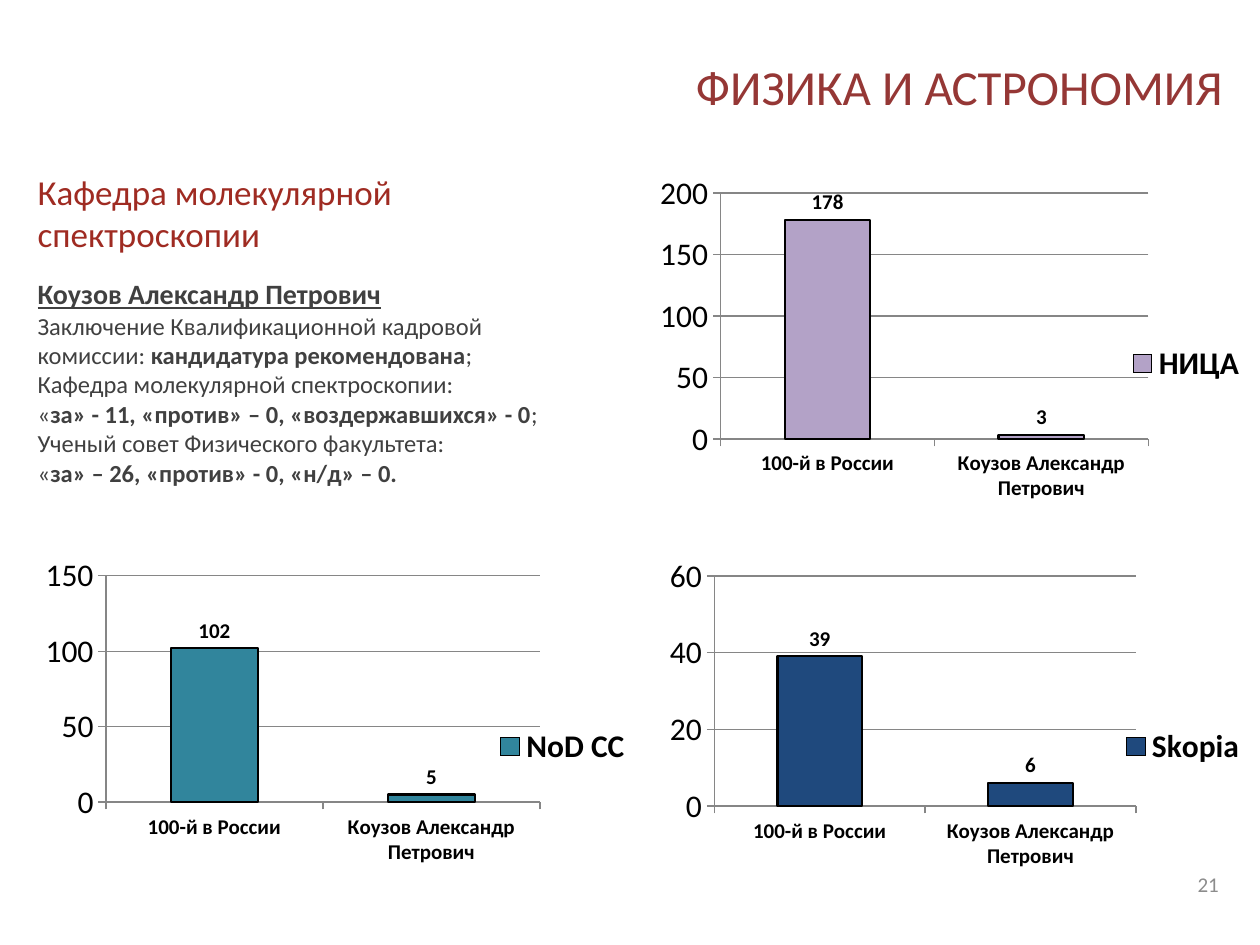
from dataclasses import dataclass

from pptx import Presentation
from pptx.chart.data import CategoryChartData
from pptx.dml.color import RGBColor
from pptx.enum.chart import XL_CHART_TYPE, XL_LABEL_POSITION, XL_LEGEND_POSITION, XL_TICK_MARK
from pptx.enum.text import MSO_ANCHOR, PP_ALIGN
from pptx.oxml import parse_xml
from pptx.oxml.ns import nsdecls
from pptx.util import Cm, Pt

FONT = "Calibri"
BLACK = RGBColor(0x00, 0x00, 0x00)
AXIS_GREY = RGBColor(0x86, 0x86, 0x86)
NUMBER_GREY = RGBColor(0x8C, 0x8C, 0x8C)
TEXT_GREY = RGBColor(0x40, 0x40, 0x40)
TITLE_RED = RGBColor(0x95, 0x37, 0x35)
DEPARTMENT_RED = RGBColor(0x9F, 0x2B, 0x22)
LILAC = RGBColor(0xB3, 0xA2, 0xC7)
TEAL = RGBColor(0x31, 0x85, 0x9C)
NAVY = RGBColor(0x1F, 0x49, 0x7D)

CANDIDATE = "Коузов Александр Петрович"
CATEGORIES = ("100-й в России", CANDIDATE)
LEFT_COLUMN, RIGHT_COLUMN = 0.51, 12.9
UPPER_ROW, LOWER_ROW = 3.33, 11.05
CHART_WIDTH, CHART_HEIGHT = 12.5, 8.0


@dataclass(frozen=True)
class CitationIndex:
    name: str
    values: tuple[int, int]
    color: RGBColor
    left: float
    top: float
    axis_max: int
    axis_step: int
    plot_area: tuple[float, float, float, float]


@dataclass(frozen=True)
class Label:
    text: str
    box: tuple[float, float, float, float]
    size: int
    color: RGBColor
    align: PP_ALIGN


INDEXES = (
    CitationIndex("НИЦА", (178, 3), LILAC, RIGHT_COLUMN, UPPER_ROW, 200, 50,
                  (0.13, 0.07, 0.69, 0.62)),
    CitationIndex("NoD CC", (102, 5), TEAL, LEFT_COLUMN, LOWER_ROW, 150, 50,
                  (0.13, 0.07, 0.7, 0.57)),
    CitationIndex("Skopia", (39, 6), NAVY, RIGHT_COLUMN, LOWER_ROW, 60, 20,
                  (0.12, 0.07, 0.68, 0.58)),
)

LABELS = (
    Label("ФИЗИКА И АСТРОНОМИЯ", (6.5, 0.76, 18.39, 1.96), 28, TITLE_RED, PP_ALIGN.RIGHT),
    Label("Кафедра молекулярной спектроскопии", (LEFT_COLUMN, 3.3, 10.8, 1.96), 20,
          DEPARTMENT_RED, PP_ALIGN.LEFT),
    Label("21", (18.9, 17.32, 5.92, 1.02), 12, NUMBER_GREY, PP_ALIGN.RIGHT),
)

# Each line is a sequence of (text, bold) pieces.
DECISIONS = (
    (("Заключение Квалификационной кадровой комиссии: ", False),
     ("кандидатура рекомендована", True), (";", False)),
    (("Кафедра молекулярной спектроскопии:", False),),
    (("«", False), ("за» - 11, «против» – 0, «воздержавшихся» - 0", True), (";", False)),
    (("Ученый совет Физического факультета:", False),),
    (("«", False), ("за» – 26, «против» - 0, «н/д» – 0.", True)),
)


def style_font(font, size: int, color: RGBColor) -> None:
    font.name = FONT
    font.size = Pt(size)
    font.color.rgb = color


def add_text_frame(slide, box: tuple[float, float, float, float]):
    frame = slide.shapes.add_textbox(*map(Cm, box)).text_frame
    frame.word_wrap = True
    return frame


def add_label(slide, label: Label) -> None:
    frame = add_text_frame(slide, label.box)
    frame.vertical_anchor = MSO_ANCHOR.MIDDLE
    paragraph = frame.paragraphs[0]
    paragraph.text = label.text
    paragraph.alignment = label.align
    style_font(paragraph.font, label.size, label.color)


def add_decisions(slide) -> None:
    frame = add_text_frame(slide, (LEFT_COLUMN, 5.46, 11.61, 4.7))
    heading = frame.paragraphs[0]
    heading.text = CANDIDATE
    style_font(heading.font, 16, TEXT_GREY)
    heading.font.bold = True
    heading.font.underline = True
    for pieces in DECISIONS:
        paragraph = frame.add_paragraph()
        style_font(paragraph.font, 14, TEXT_GREY)
        for text, bold in pieces:
            run = paragraph.add_run()
            run.text = text
            run.font.bold = bold


def place_plot_area(chart, fractions: tuple[float, float, float, float]) -> None:
    """Fix the inner plot area as fractions of the chart's size."""
    plot_area = chart.element.xpath(".//c:plotArea")[0]
    for layout in plot_area.xpath("./c:layout"):
        plot_area.remove(layout)
    x, y, w, h = fractions
    plot_area.insert(0, parse_xml(
        f'<c:layout {nsdecls("c")}><c:manualLayout><c:layoutTarget val="inner"/>'
        f'<c:xMode val="edge"/><c:yMode val="edge"/><c:x val="{x}"/><c:y val="{y}"/>'
        f'<c:w val="{w}"/><c:h val="{h}"/></c:manualLayout></c:layout>'))


def add_index_chart(slide, index: CitationIndex) -> None:
    data = CategoryChartData()
    data.categories = CATEGORIES
    data.add_series(index.name, index.values)
    box = (index.left, index.top, CHART_WIDTH, CHART_HEIGHT)
    chart = slide.shapes.add_chart(XL_CHART_TYPE.COLUMN_CLUSTERED, *map(Cm, box), data).chart
    style_font(chart.font, 18, BLACK)
    chart.has_title = False
    place_plot_area(chart, index.plot_area)

    chart.has_legend = True
    chart.legend.position = XL_LEGEND_POSITION.RIGHT
    chart.legend.include_in_layout = False
    style_font(chart.legend.font, 18, BLACK)
    chart.legend.font.bold = True

    for axis in (chart.category_axis, chart.value_axis):
        axis.major_tick_mark = XL_TICK_MARK.OUTSIDE
        axis.format.line.color.rgb = AXIS_GREY
        axis.format.line.width = Pt(0.75)
    style_font(chart.category_axis.tick_labels.font, 12, BLACK)
    chart.category_axis.tick_labels.font.bold = True
    scale = chart.value_axis
    scale.minimum_scale = 0
    scale.maximum_scale = index.axis_max
    scale.major_unit = index.axis_step
    scale.has_major_gridlines = True
    scale.major_gridlines.format.line.color.rgb = AXIS_GREY
    scale.major_gridlines.format.line.width = Pt(0.75)

    plot = chart.plots[0]
    plot.gap_width = 150
    plot.vary_by_categories = False
    columns = plot.series[0]
    columns.format.fill.solid()
    columns.format.fill.fore_color.rgb = index.color
    columns.format.line.color.rgb = BLACK
    columns.format.line.width = Pt(1.25)
    value_labels = columns.data_labels
    value_labels.show_value = True
    value_labels.position = XL_LABEL_POSITION.OUTSIDE_END
    style_font(value_labels.font, 12, BLACK)
    value_labels.font.bold = True


def main() -> None:
    presentation = Presentation()
    presentation.slide_width = Cm(25.4)
    presentation.slide_height = Cm(19.05)
    slide = presentation.slides.add_slide(presentation.slide_layouts[6])
    for index in INDEXES:
        add_index_chart(slide, index)
    for label in LABELS:
        add_label(slide, label)
    add_decisions(slide)
    presentation.save("out.pptx")


if __name__ == "__main__":
    main()
